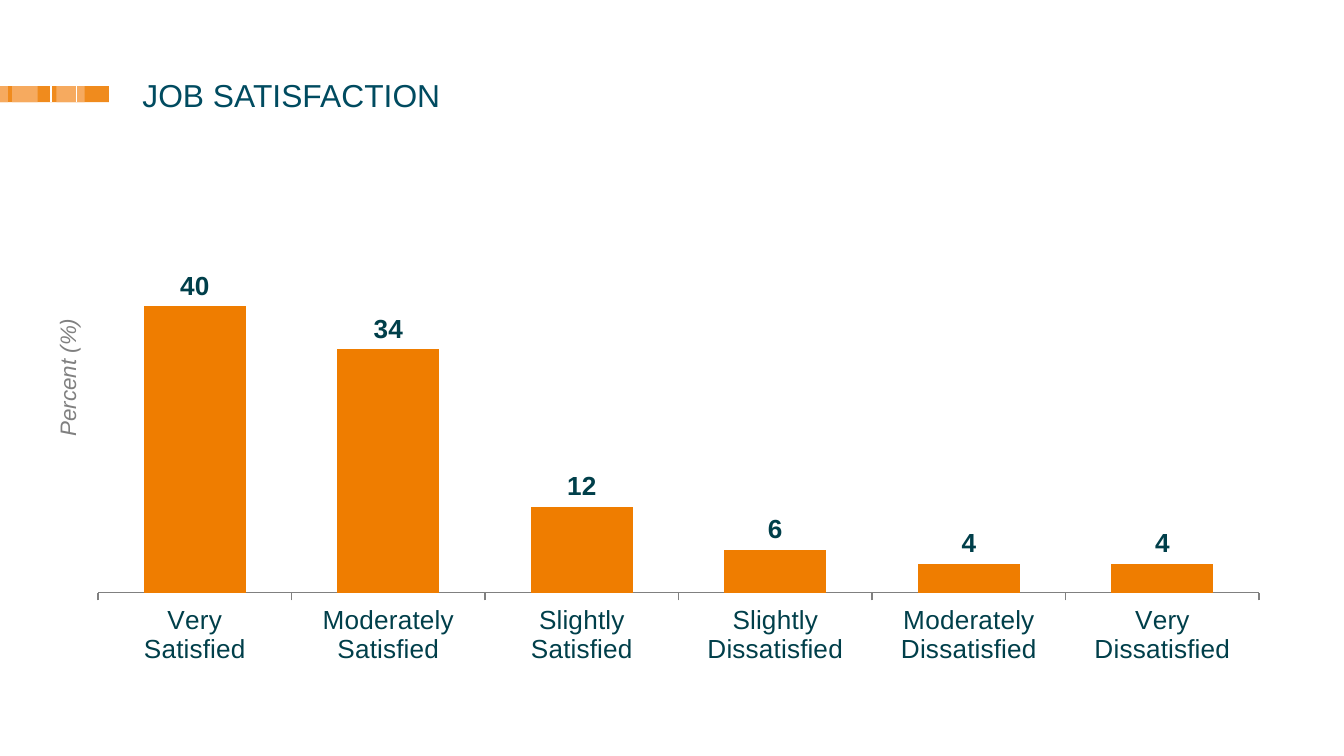
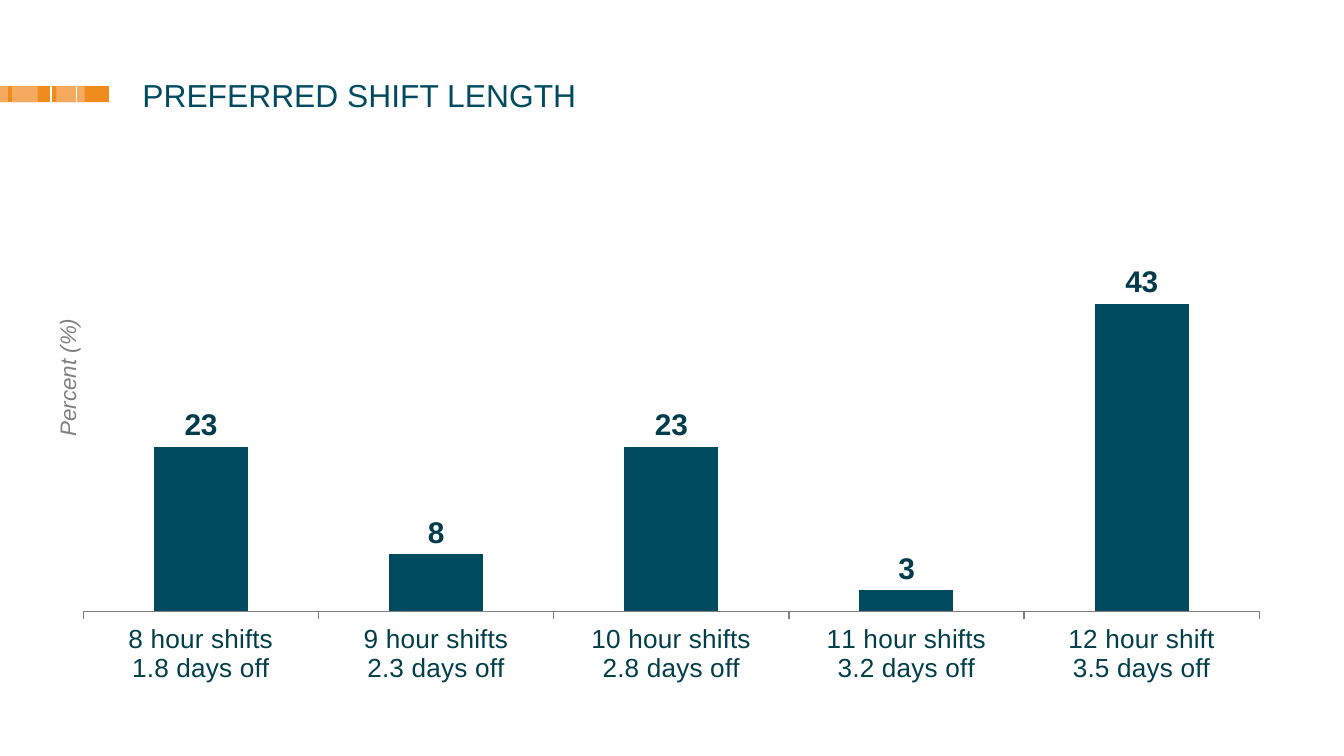
from dataclasses import dataclass

from lxml import etree
from pptx import Presentation
from pptx import util as u
from pptx.chart import data as chart_data
from pptx.dml import color
from pptx.enum import chart as ch
from pptx.enum import shapes, text
from pptx.oxml import ns

Inches = u.Inches


@dataclass(frozen=True)
class Theme:
    font: str = "Arial"
    teal: str = "004B60"
    orange: str = "EF7D00"
    chart_text: str = "003F4A"
    label_teal: str = "003C4C"
    grey: str = "808080"
    white: str = "FFFFFF"
    band_dark: str = "F08B1D"
    band_light: str = "F6AA5F"
    title_size: float = 17
    chart_size: float = 14
    large_label_size: float = 16
    note_size: float = 12


THEME = Theme()


@dataclass(frozen=True)
class Box:
    x: float
    y: float
    w: float
    h: float


@dataclass(frozen=True)
class Band:
    x: float
    w: float
    fill: str


@dataclass(frozen=True)
class ChartSlide:
    title: str
    box: Box
    plot: Box  # inches from the chart's top left corner
    categories: tuple[str, ...]
    values: tuple[int, ...]
    bar_color: str
    label_color: str
    label_size: float
    axis_max: int
    axis_step: int
    gap: int
    overlap: int = 0


# Shared positions
BAND_TOP, BAND_HEIGHT = 0.64, 0.12
BANDS = (
    Band(0, 0.81, THEME.band_dark),
    Band(0.42, 0.21, THEME.band_light),
    Band(0.09, 0.19, THEME.band_light),
    Band(0, 0.06, THEME.band_light),
)
BAND_GAPS = (0.38, 0.57)
TITLE_BOX = Box(1.06, 0.61, 8.27, 0.5)
AXIS_NOTE_BOX = Box(0.43, 2.24, 0.31, 1.14)

SLIDES = (
    ChartSlide(
        "JOB SATISFACTION",
        Box(0.47, 0.12, 9.06, 5.03),
        Box(0.26, 0.56, 8.64, 3.73),
        ("Very\nSatisfied", "Moderately\nSatisfied", "Slightly\nSatisfied",
         "Slightly\nDissatisfied", "Moderately\nDissatisfied", "Very\nDissatisfied"),
        (40, 34, 12, 6, 4, 4),
        THEME.orange, THEME.chart_text, THEME.chart_size,
        axis_max=70, axis_step=30, gap=90, overlap=-14,
    ),
    ChartSlide(
        "PREFERRED SHIFT LENGTH",
        Box(0.47, 0.29, 9.06, 4.9),
        Box(0.15, 0, 8.75, 4.26),
        ("8 hour shifts\n1.8 days off", "9 hour shifts\n2.3 days off",
         "10 hour shifts\n2.8 days off", "11 hour shifts\n3.2 days off",
         "12 hour shift\n3.5 days off"),
        (23, 8, 23, 3, 43),
        THEME.teal, THEME.label_teal, THEME.large_label_size,
        axis_max=80, axis_step=40, gap=150,
    ),
)


def rgb(value: str) -> color.RGBColor:
    return color.RGBColor.from_string(value)


def place(box: Box) -> tuple:
    return Inches(box.x), Inches(box.y), Inches(box.w), Inches(box.h)


def style_font(font, size: float, hex_color: str, bold=False, italic=False) -> None:
    font.name, font.size = THEME.font, u.Pt(size)
    font.bold, font.italic = bold, italic
    font.color.rgb = rgb(hex_color)


def add_bands(s) -> None:
    group = s.shapes.add_group_shape()
    for band in BANDS:
        sp = group.shapes.add_shape(
            shapes.MSO_SHAPE.RECTANGLE,
            *place(Box(band.x, BAND_TOP, band.w, BAND_HEIGHT)))
        sp.shadow.inherit = False
        sp.fill.solid()
        sp.fill.fore_color.rgb = rgb(band.fill)
        sp.line.fill.background()
    for x in BAND_GAPS:
        line = group.shapes.add_connector(
            shapes.MSO_CONNECTOR.STRAIGHT, Inches(x), Inches(BAND_TOP),
            Inches(x), Inches(BAND_TOP + BAND_HEIGHT))
        line.line.color.rgb = rgb(THEME.white)
        line.line.width = u.Pt(0.63)
        etree.SubElement(line.element.spPr, ns.qn("a:effectLst"))


def add_text(s, box: Box, words: str, size: float, hex_color: str,
             italic=False, centred=False, upward=False) -> None:
    sp = s.shapes.add_textbox(*place(box))
    tf = sp.text_frame
    tf.word_wrap = True
    tf.margin_left = tf.margin_right = tf.margin_top = tf.margin_bottom = 0
    tf.text = words
    p = tf.paragraphs[0]
    p.line_spacing, p.space_after = 0.85, u.Pt(12)
    p.alignment = text.PP_ALIGN.CENTER if centred else text.PP_ALIGN.LEFT
    style_font(p.runs[0].font, size, hex_color, italic=italic)
    if upward:
        sp.element.txBody.bodyPr.set("vert", "vert270")


def set_plot_area(chart, box: Box, plot: Box) -> None:
    area = chart.element.chart.plotArea
    for old in area.findall(ns.qn("c:layout")):
        area.remove(old)
    layout = etree.Element(ns.qn("c:layout"))
    manual = etree.SubElement(layout, ns.qn("c:manualLayout"))
    settings = (("layoutTarget", "inner"), ("xMode", "edge"), ("yMode", "edge"),
                ("x", plot.x / box.w), ("y", plot.y / box.h),
                ("w", plot.w / box.w), ("h", plot.h / box.h))
    for tag, value in settings:
        etree.SubElement(manual, ns.qn(f"c:{tag}")).set("val", str(value))
    area.insert(0, layout)


def add_column_chart(s, item: ChartSlide) -> None:
    data = chart_data.CategoryChartData(number_format="0")
    data.categories = item.categories
    data.add_series("Series 1", item.values)
    chart = s.shapes.add_chart(
        ch.XL_CHART_TYPE.COLUMN_CLUSTERED, *place(item.box), data).chart
    chart.has_title = chart.has_legend = False
    style_font(chart.font, THEME.chart_size, THEME.chart_text)
    set_plot_area(chart, item.box, item.plot)

    # Axes
    cat, val = chart.category_axis, chart.value_axis
    cat.major_tick_mark = ch.XL_TICK_MARK.OUTSIDE
    cat.format.line.color.rgb = rgb(THEME.grey)
    cat.format.line.width = u.Pt(0.75)
    val.minimum_scale, val.maximum_scale = 0, item.axis_max
    val.major_unit = item.axis_step
    val.has_major_gridlines = False
    val.visible = False

    # Columns and their labels
    plot = chart.plots[0]
    plot.vary_by_categories = False
    plot.gap_width, plot.overlap = item.gap, item.overlap
    fill = plot.series[0].format.fill
    fill.solid()
    fill.fore_color.rgb = rgb(item.bar_color)
    labels = plot.series[0].data_labels
    labels.show_value = True
    labels.number_format, labels.number_format_is_linked = "0", False
    labels.position = ch.XL_LABEL_POSITION.OUTSIDE_END
    style_font(labels.font, item.label_size, item.label_color, bold=True)


def add_chart_slide(prs, item: ChartSlide) -> None:
    s = prs.slides.add_slide(prs.slide_layouts[6])
    add_bands(s)
    add_text(s, TITLE_BOX, item.title, THEME.title_size, THEME.teal)
    add_column_chart(s, item)
    add_text(s, AXIS_NOTE_BOX, "Percent (%)", THEME.note_size, THEME.grey,
             italic=True, centred=True, upward=True)


def main() -> None:
    prs = Presentation()
    # Widescreen, 16:9
    prs.slide_width = Inches(10)
    prs.slide_height = prs.slide_width * 9 // 16
    for item in SLIDES:
        add_chart_slide(prs, item)
    prs.save("out.pptx")


if __name__ == "__main__":
    main()
